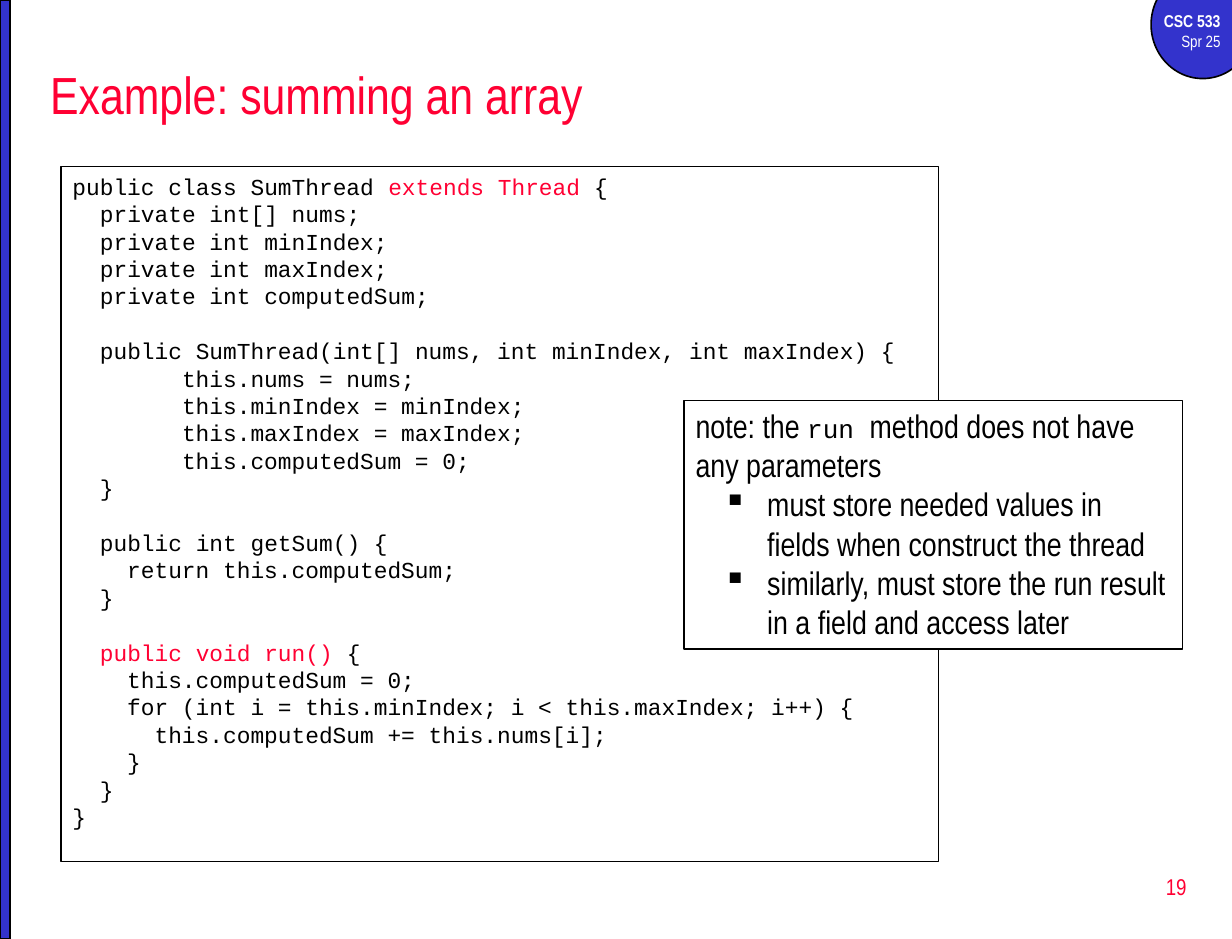
from lxml.etree import SubElement
from pptx import Presentation
from pptx.dml.color import RGBColor
from pptx.enum.shapes import MSO_SHAPE
from pptx.enum.text import MSO_ANCHOR, PP_ALIGN
from pptx.oxml.ns import qn
from pptx.util import Inches, Pt

WIDTH, HEIGHT = Inches(10.5), Inches(8)
BLUE = RGBColor(0x33, 0x33, 0xCC)
RED = RGBColor(0xFF, 0x00, 0x33)
BLACK = RGBColor(0, 0, 0)
WHITE = RGBColor(0xFF, 0xFF, 0xFF)
SANS, MONO = "Arial Narrow", "Courier New"
CODE_SIZE = 14
CODE_PITCH = 1.2 * CODE_SIZE
CHAR_WIDTH = 0.6 * CODE_SIZE
HIGHLIGHTS = ("extends Thread", "public void run()")

CODE = """\
public class SumThread extends Thread {
  private int[] nums;
  private int minIndex;
  private int maxIndex;
  private int computedSum;

  public SumThread(int[] nums, int minIndex, int maxIndex) {
        this.nums = nums;
        this.minIndex = minIndex;
        this.maxIndex = maxIndex;
        this.computedSum = 0;
  }

  public int getSum() {
    return this.computedSum;
  }

  public void run() {
    this.computedSum = 0;
    for (int i = this.minIndex; i < this.maxIndex; i++) {
      this.computedSum += this.nums[i];
    }
  }
}"""

NOTES = (
    "must store needed values in fields when construct the thread",
    "similarly, must store the run result in a field and access later",
)


def place(left, top, width, height):
    """Turn percentages of the slide's size into lengths."""
    return [int(share * full / 100) for share, full in
            ((left, WIDTH), (top, HEIGHT), (width, WIDTH), (height, HEIGHT))]


def add_box(slide, area, shape=MSO_SHAPE.RECTANGLE, fill=None, line=0.75):
    sp = slide.shapes.add_shape(shape, *place(*area))
    sp.shadow.inherit = False
    if fill is None:
        sp.fill.background()
    else:
        sp.fill.solid()
        sp.fill.fore_color.rgb = fill
    sp.line.color.rgb = BLACK
    sp.line.width = Pt(line)
    return setup_frame(sp)


def add_label(slide, area, anchor=MSO_ANCHOR.TOP):
    return setup_frame(slide.shapes.add_textbox(*place(*area)), anchor)


def setup_frame(sp, anchor=MSO_ANCHOR.TOP):
    tf = sp.text_frame
    tf.word_wrap = True
    tf.vertical_anchor = anchor
    return tf


def add_paragraph(tf, align=PP_ALIGN.LEFT, indent=0, hanging=0, bullet=None):
    """Use the empty first paragraph or add one; indents are in points."""
    first = tf.paragraphs[0]
    p = tf.add_paragraph() if first.runs else first
    p.alignment = align
    pPr = p._p.get_or_add_pPr()
    pPr.set("marL", str(Pt(indent)))
    pPr.set("indent", str(-Pt(hanging)))
    if bullet:
        SubElement(pPr, qn("a:buChar")).set("char", bullet)
    return p


def add_text(p, text, size=20, font=SANS, color=BLACK, bold=False):
    r = p.add_run()
    r.text = text
    r.font.size = Pt(size)
    r.font.name = font
    r.font.color.rgb = color
    r.font.bold = bold


def add_code(tf, code):
    """Write code lines: leading spaces become indents, empty lines gaps."""
    gap = 0
    for line in code.splitlines():
        text = line.lstrip()
        if not text:
            gap = CODE_PITCH
            continue
        p = add_paragraph(tf, indent=CHAR_WIDTH * (len(line) - len(text)))
        p.line_spacing = Pt(CODE_PITCH)
        p.space_before = Pt(gap)
        gap = 0
        marked = next((h for h in HIGHLIGHTS if h in text), "")
        before, _, after = text.partition(marked) if marked else (text, "", "")
        for part, color in ((before, BLACK), (marked, RED), (after, BLACK)):
            if part:
                add_text(p, part, size=CODE_SIZE, font=MONO, color=color)


def add_note(tf):
    p = add_paragraph(tf)
    add_text(p, "note: the ")
    add_text(p, "run ", size=16, font=MONO)
    add_text(p, "method does not have any parameters")
    for note in NOTES:
        add_text(add_paragraph(tf, indent=44, hanging=27, bullet="▪"), note)


def add_frame(slide):
    """Draw the course badge and the bar on the left edge."""
    add_box(slide, (93.43, -3.13, 8.38, 11.5), MSO_SHAPE.OVAL, BLUE, line=1)
    tf = add_label(slide, (92.1, 0.5, 7.9, 5.75))
    add_text(add_paragraph(tf, PP_ALIGN.RIGHT), "CSC 533",
             size=10.5, color=WHITE, bold=True)
    add_text(add_paragraph(tf, PP_ALIGN.RIGHT), "Spr 25", size=10, color=WHITE)
    add_box(slide, (0, 0, 0.8, 100), fill=BLUE, line=1)


def main():
    prs = Presentation()
    prs.slide_width, prs.slide_height = WIDTH, HEIGHT
    s = prs.slides.add_slide(prs.slide_layouts[6])

    add_frame(s)
    title = add_label(s, (3.14, 5.25, 94.5, 9.38), MSO_ANCHOR.MIDDLE)
    add_text(add_paragraph(title), "Example: summing an array",
             size=32, color=RED)
    add_code(add_box(s, (4.95, 17.75, 71.25, 74)), CODE)
    number = add_label(s, (76.4, 91.13, 20.85, 6.63), MSO_ANCHOR.MIDDLE)
    add_text(add_paragraph(number, PP_ALIGN.RIGHT), "19", size=14, color=RED)
    add_note(add_box(s, (55.52, 42.63, 40.5, 26.5), fill=WHITE))

    prs.save("out.pptx")


if __name__ == "__main__":
    main()
